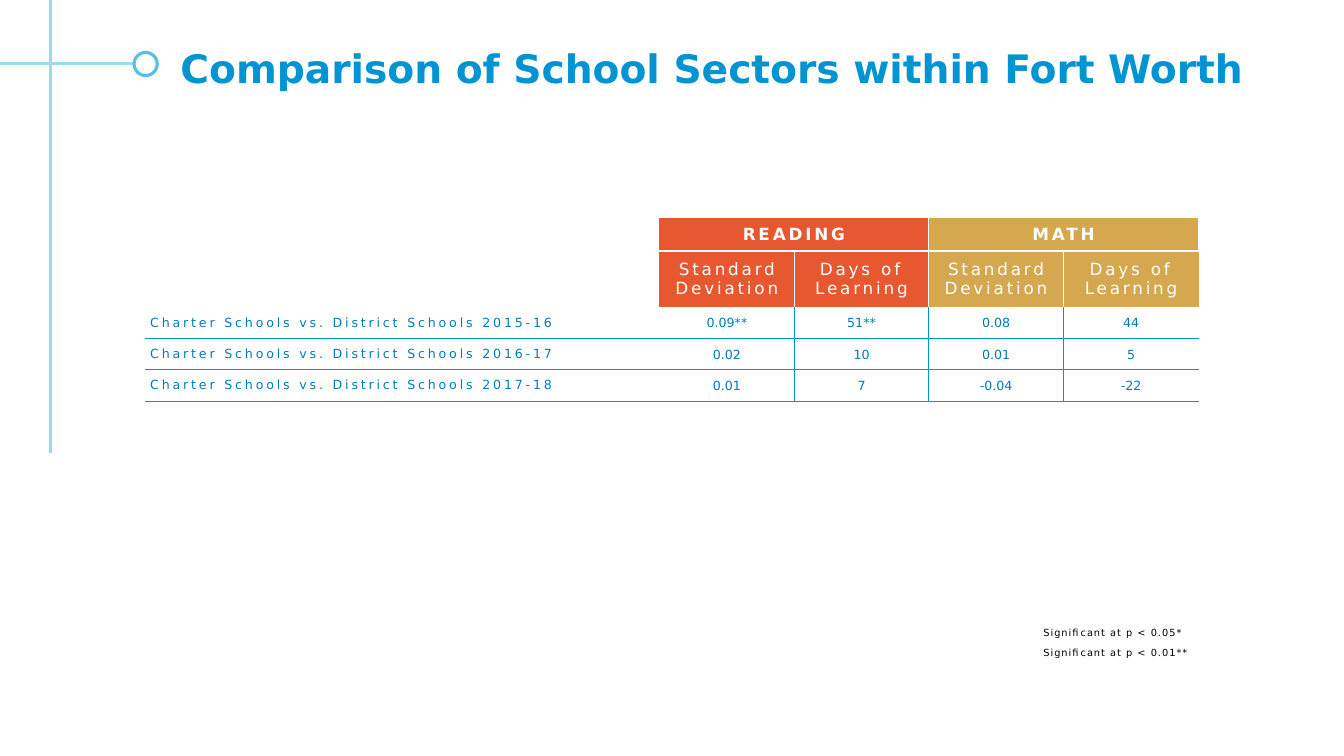
from dataclasses import dataclass

from lxml import etree
from pptx import Presentation
from pptx.dml.color import RGBColor
from pptx.enum.shapes import MSO_CONNECTOR, MSO_SHAPE
from pptx.enum.text import MSO_ANCHOR, MSO_AUTO_SIZE, PP_ALIGN
from pptx.oxml.ns import qn
from pptx.util import Pt

STRAIGHT = MSO_CONNECTOR.STRAIGHT
OVAL = MSO_SHAPE.OVAL
TOP, MIDDLE = MSO_ANCHOR.TOP, MSO_ANCHOR.MIDDLE
LEFT, CENTER = PP_ALIGN.LEFT, PP_ALIGN.CENTER
NO_AUTOFIT = MSO_AUTO_SIZE.NONE

EMU_PER_PX = 9144
TITLE_ONLY = 5
PLAIN_TABLE_STYLE = "{2D5ABB26-0587-4C30-8999-92F81FD0307C}"


@dataclass(frozen=True)
class Theme:
    font: str = "DejaVu Sans"
    white: str = "FFFFFF"
    black: str = "000000"
    blue: str = "0194D3"
    table_blue: str = "007CBA"
    guide: str = "9CDAED"
    ring: str = "57BEED"
    reading: str = "E75830"
    math: str = "D5A74F"
    title_size: int = 28
    header_size: int = 12
    body_size: int = 9
    note_size: int = 7
    guide_width: float = 2.25
    rule_width: int = 1


THEME = Theme()

SUBJECTS = (("READING", THEME.reading), ("MATH", THEME.math))
MEASURES = ("Standard\nDeviation", "Days of Learning")
RESULTS = (
    ("Charter Schools vs. District Schools 2015-16", "0.09**", "51**", "0.08", "44"),
    ("Charter Schools vs. District Schools 2016-17", "0.02", "10", "0.01", "5"),
    ("Charter Schools vs. District Schools 2017-18", "0.01", "7", "-0.04", "-22"),
)
COLUMN_WIDTHS = (510, 134, 133, 134, 134)
ROW_HEIGHTS = (33, 56) + (31,) * 6
HEADER_ROWS = 2
FIRST_BLANK_ROW = HEADER_ROWS + len(RESULTS)


def px(length):
    return length * EMU_PER_PX


def rgb(color):
    return RGBColor.from_string(color)


def write_text(frame, text, size, color, bold=False, align=LEFT, spacing=0,
               space_after=0, hanging=0):
    """Fill the frame with one paragraph per line; spacing is in points."""
    frame.word_wrap = True
    for index, line in enumerate(text.split("\n")):
        paragraph = frame.paragraphs[0] if index == 0 else frame.add_paragraph()
        paragraph.alignment = align
        paragraph.space_after = Pt(space_after)
        if hanging:
            properties = paragraph._p.get_or_add_pPr()
            properties.set("marL", str(px(hanging)))
            properties.set("indent", str(-px(hanging)))
        run = paragraph.add_run()
        run.text = line
        run.font.name = THEME.font
        run.font.size = Pt(size)
        run.font.bold = bold
        run.font.color.rgb = rgb(color)
        if spacing:
            run.font._element.set("spc", str(round(spacing * 100)))


def add_guide(slide, start, end):
    line = slide.shapes.add_connector(STRAIGHT, *map(px, start + end))
    line.line.color.rgb = rgb(THEME.guide)
    line.line.width = Pt(THEME.guide_width)
    etree.SubElement(line._element.spPr, qn("a:effectLst"))


def add_corner_guides(slide, left, top, width, height):
    """Draw the crossing lines, with a ring where the level one ends."""
    cross_x, cross_y, ring_size = 50, 63, 23
    add_guide(slide, (left + cross_x, top), (left + cross_x, top + height))
    add_guide(slide, (left + width, top + cross_y), (left, top + cross_y))
    ring = slide.shapes.add_shape(
        OVAL, px(left + width), px(top + cross_y - ring_size // 2),
        px(ring_size), px(ring_size))
    ring.shadow.inherit = False
    ring.fill.solid()
    ring.fill.fore_color.rgb = rgb(THEME.white)
    ring.line.color.rgb = rgb(THEME.ring)
    ring.line.width = Pt(THEME.guide_width)


def add_title(slide, left, top, width, height):
    title = slide.shapes.title
    title.left, title.top, title.width, title.height = map(px, (left, top, width, height))
    title.text_frame.auto_size = NO_AUTOFIT
    title.text_frame.vertical_anchor = MIDDLE
    write_text(title.text_frame, "Comparison of School Sectors within Fort Worth",
               THEME.title_size, THEME.blue, bold=True)


def fill_cell(cell, color):
    cell.fill.solid()
    cell.fill.fore_color.rgb = rgb(color)


def write_cell(cell, text, insets=(5, 3, 5, 3), **text_format):
    cell.vertical_anchor = MIDDLE
    (cell.margin_left, cell.margin_top,
     cell.margin_right, cell.margin_bottom) = map(px, insets)
    write_text(cell.text_frame, text, **text_format)


def add_borders(cell, sides, color):
    """Rule the given sides and leave the others without a line."""
    properties = cell._tc.get_or_add_tcPr()
    for index, side in enumerate("LRTB"):
        line = etree.Element(qn(f"a:ln{side}"), w=str(Pt(THEME.rule_width)))
        if side in sides:
            fill = etree.SubElement(line, qn("a:solidFill"))
            etree.SubElement(fill, qn("a:srgbClr"), val=color)
        else:
            etree.SubElement(line, qn("a:noFill"))
        properties.insert(index, line)


def ruled_sides(row, column):
    if row > FIRST_BLANK_ROW or (row < HEADER_ROWS and column == 0):
        return ""
    if row == FIRST_BLANK_ROW:
        return "T"
    sides = "L" if column > 1 else ""
    if 0 < column < len(COLUMN_WIDTHS) - 1:
        sides += "R"
    if row not in (0, HEADER_ROWS):
        sides += "T"
    if row != HEADER_ROWS - 1:
        sides += "B"
    return sides


def fill_headers(table):
    header = dict(size=THEME.header_size, color=THEME.white, align=CENTER, spacing=2)
    table.cell(0, 0).merge(table.cell(1, 0))
    for index, (subject, fill) in enumerate(SUBJECTS):
        first = 1 + index * len(MEASURES)
        table.cell(0, first).merge(table.cell(0, first + len(MEASURES) - 1))
        write_cell(table.cell(0, first), subject, bold=True, **header)
        fill_cell(table.cell(0, first), fill)
        for column, measure in enumerate(MEASURES, first):
            write_cell(table.cell(1, column), measure, **header)
            fill_cell(table.cell(1, column), fill)


def fill_results(table):
    body = dict(size=THEME.body_size, color=THEME.table_blue)
    for row, (label, *values) in enumerate(RESULTS, HEADER_ROWS):
        write_cell(table.cell(row, 0), label, spacing=2, **body)
        for column, value in enumerate(values, 1):
            write_cell(table.cell(row, column), value, insets=(1, 1, 1, 0),
                       align=CENTER, **body)


def add_results_table(slide, left, top):
    frame = slide.shapes.add_table(
        len(ROW_HEIGHTS), len(COLUMN_WIDTHS), px(left), px(top),
        px(sum(COLUMN_WIDTHS)), px(sum(ROW_HEIGHTS)))
    table = frame.table
    table.first_row = table.horz_banding = False
    frame._element.find(".//" + qn("a:tableStyleId")).text = PLAIN_TABLE_STYLE
    for column, width in zip(table.columns, COLUMN_WIDTHS):
        column.width = px(width)
    for row, height in zip(table.rows, ROW_HEIGHTS):
        row.height = px(height)
    for row in range(len(ROW_HEIGHTS)):
        color = THEME.white if row < HEADER_ROWS else THEME.blue
        for column in range(len(COLUMN_WIDTHS)):
            cell = table.cell(row, column)
            if row >= FIRST_BLANK_ROW:
                fill_cell(cell, THEME.white)
            else:
                cell.fill.background()
            add_borders(cell, ruled_sides(row, column), color)
    fill_headers(table)
    fill_results(table)


def add_significance_notes(slide, left, top, width, height):
    box = slide.shapes.add_textbox(*map(px, (left, top, width, height)))
    box.text_frame.vertical_anchor = TOP
    write_text(box.text_frame, "Significant at p < 0.05*\nSignificant at p < 0.01**",
               THEME.note_size, THEME.black, spacing=0.75, space_after=6, hanging=25)


def main():
    presentation = Presentation()
    presentation.slide_width, presentation.slide_height = px(1333), px(750)
    slide = presentation.slides.add_slide(presentation.slide_layouts[TITLE_ONLY])
    add_corner_guides(slide, 0, 0, 133, 449)
    add_title(slide, 169, 39, 1134, 56)
    add_significance_notes(slide, 1025, 617, 183, 56)
    add_results_table(slide, 144, 216)
    presentation.save("out.pptx")


if __name__ == "__main__":
    main()
